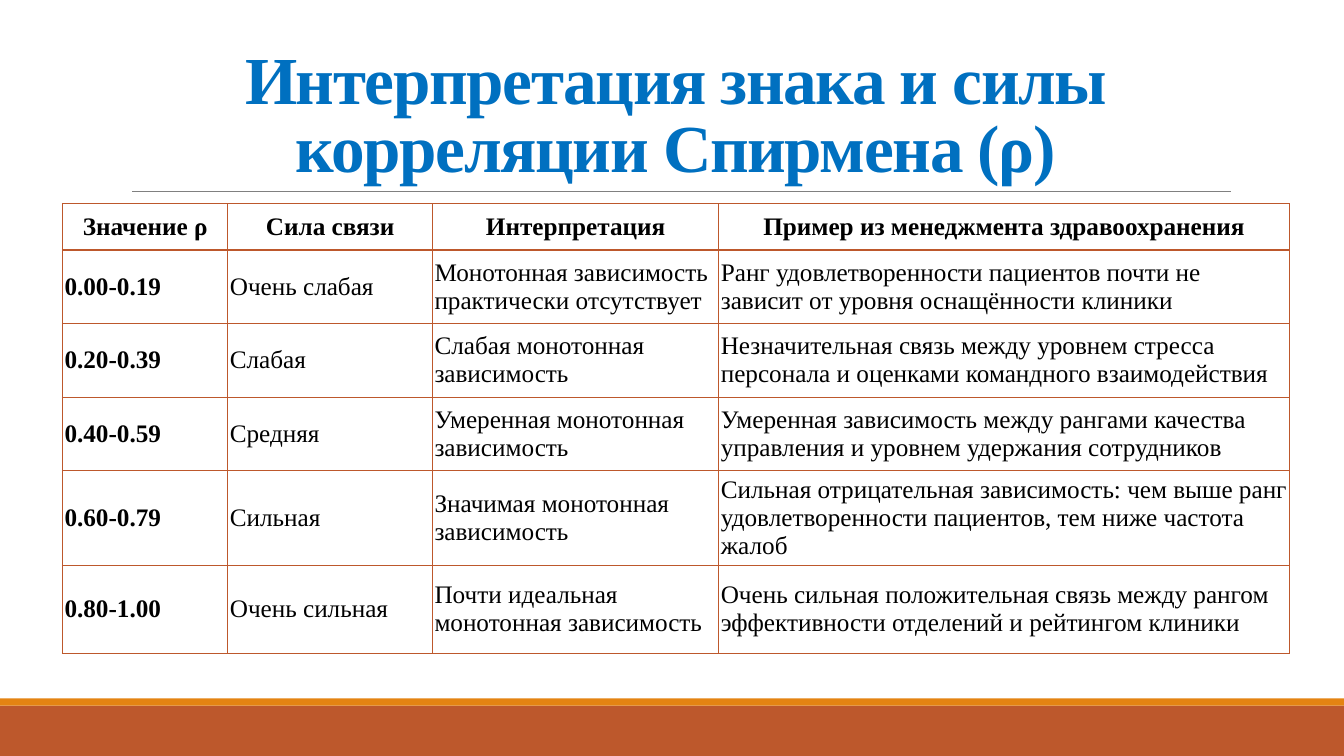
import pptx
import pptx.util
import pptx.dml.color
import pptx.enum.shapes
import pptx.enum.text
import pptx.oxml.ns
import lxml.etree

Inches = pptx.util.Inches
Pt = pptx.util.Pt
RGBColor = pptx.dml.color.RGBColor
PP_ALIGN = pptx.enum.text.PP_ALIGN
MSO_ANCHOR = pptx.enum.text.MSO_ANCHOR
qn = pptx.oxml.ns.qn

TITLE = "Интерпретация знака и силы корреляции Спирмена (ρ)"
ROWS = [
    ("Значение ρ", "Сила связи", "Интерпретация", "Пример из менеджмента здравоохранения"),
    ("0.00-0.19", "Очень слабая", "Монотонная зависимость практически отсутствует",
     "Ранг удовлетворенности пациентов почти не зависит от уровня оснащённости клиники"),
    ("0.20-0.39", "Слабая", "Слабая монотонная зависимость",
     "Незначительная связь между уровнем стресса персонала и оценками командного взаимодействия"),
    ("0.40-0.59", "Средняя", "Умеренная монотонная зависимость",
     "Умеренная зависимость между рангами качества управления и уровнем удержания сотрудников"),
    ("0.60-0.79", "Сильная", "Значимая монотонная зависимость",
     "Сильная отрицательная зависимость: чем выше ранг удовлетворенности пациентов, тем ниже частота жалоб"),
    ("0.80-1.00", "Очень сильная", "Почти идеальная монотонная зависимость",
     "Очень сильная положительная связь между рангом эффективности отделений и рейтингом клиники"),
]
COLUMN_WIDTHS = (1.64, 2.03, 2.84, 5.66)
ROW_HEIGHTS = (0.46, 0.73, 0.73, 0.73, 0.87, 0.87)

FONT = "Times New Roman"
BLUE = RGBColor(0x00, 0x70, 0xC0)
BLACK = RGBColor(0x00, 0x00, 0x00)
GRAY = RGBColor(0x80, 0x80, 0x80)
RUST = RGBColor(0xBD, 0x58, 0x2C)
ORANGE = RGBColor(0xE4, 0x83, 0x12)
BANDS = [(7, 0.5, RUST), (6.93, 0.07, ORANGE)]


def format_run(run, size, color, bold):
    run.font.name = FONT
    run.font.size = Pt(size)
    run.font.color.rgb = color
    run.font.bold = bold


def set_borders(cell, color):
    properties = cell._tc.get_or_add_tcPr()
    for position, side in enumerate(("lnL", "lnR", "lnT", "lnB")):
        line = lxml.etree.Element(qn("a:" + side), w=str(Pt(1)))
        fill = lxml.etree.SubElement(line, qn("a:solidFill"))
        lxml.etree.SubElement(fill, qn("a:srgbClr"), val=str(color))
        properties.insert(position, line)


def add_bands(slide):
    for top, height, color in BANDS:
        band = slide.shapes.add_shape(
            pptx.enum.shapes.MSO_SHAPE.RECTANGLE,
            Inches(0), Inches(top), Inches(13.33), Inches(height))
        band.shadow.inherit = False
        band.fill.solid()
        band.fill.fore_color.rgb = color
        band.line.fill.background()


def add_title(slide):
    rule = slide.shapes.add_connector(
        pptx.enum.shapes.MSO_CONNECTOR.STRAIGHT,
        Inches(1.31), Inches(1.9), Inches(12.21), Inches(1.9))
    rule.line.color.rgb = GRAY
    rule.line.width = Pt(0.5)
    lxml.etree.SubElement(rule._element.spPr, qn("a:effectLst"))

    title = slide.shapes.add_textbox(Inches(1.2), Inches(0.31), Inches(11), Inches(1.59))
    frame = title.text_frame
    frame.text = TITLE
    frame.word_wrap = True
    frame.vertical_anchor = MSO_ANCHOR.BOTTOM
    frame.margin_left = frame.margin_right = Inches(0.05)
    frame.margin_top = frame.margin_bottom = Inches(0.05)
    paragraph = frame.paragraphs[0]
    paragraph.alignment = PP_ALIGN.CENTER
    paragraph.line_spacing = 0.85
    run = paragraph.runs[0]
    format_run(run, 48, BLUE, True)
    run._r.get_or_add_rPr().set("spc", "-100")


def add_correlation_table(slide):
    table = slide.shapes.add_table(
        len(ROWS), len(COLUMN_WIDTHS), Inches(0.62), Inches(2.02),
        Inches(sum(COLUMN_WIDTHS)), Inches(sum(ROW_HEIGHTS))).table
    table.horz_banding = False
    for column, width in zip(table.columns, COLUMN_WIDTHS):
        column.width = Inches(width)
    for row, height in zip(table.rows, ROW_HEIGHTS):
        row.height = Inches(height)
    for row_index, texts in enumerate(ROWS):
        for column_index, text in enumerate(texts):
            cell = table.cell(row_index, column_index)
            cell.text_frame.text = text
            cell.fill.background()
            cell.vertical_anchor = MSO_ANCHOR.MIDDLE
            cell.margin_left = cell.margin_right = Inches(0.02)
            cell.margin_top = cell.margin_bottom = Inches(0.02)
            set_borders(cell, RUST)
            paragraph = cell.text_frame.paragraphs[0]
            paragraph.alignment = PP_ALIGN.CENTER if row_index == 0 else PP_ALIGN.LEFT
            format_run(paragraph.runs[0], 18, BLACK, row_index == 0 or column_index == 0)


def main():
    presentation = pptx.Presentation()
    presentation.slide_width = Inches(13.33)
    presentation.slide_height = Inches(7.5)
    slide = presentation.slides.add_slide(presentation.slide_layouts[6])
    add_bands(slide)
    add_title(slide)
    add_correlation_table(slide)
    presentation.save("out.pptx")


if __name__ == "__main__":
    main()
